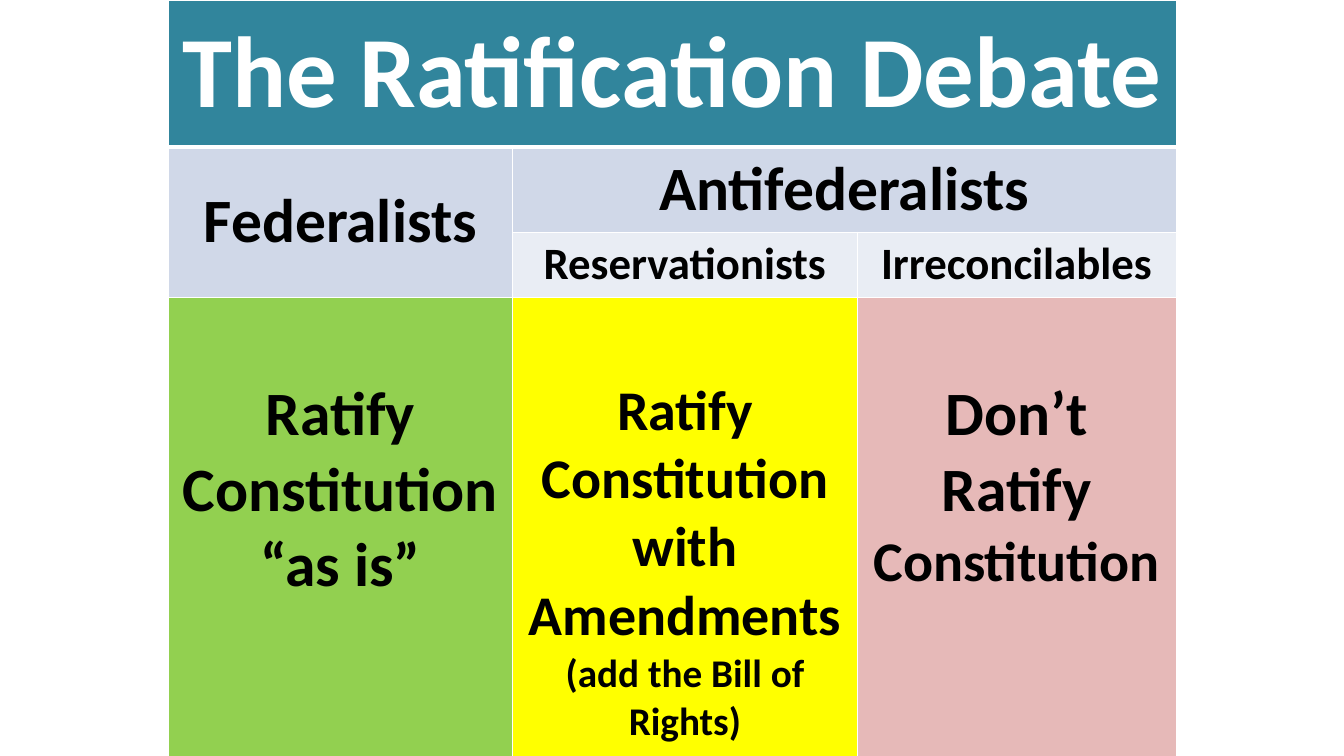
"""Build the Ratification Debate table slide."""
from dataclasses import dataclass

from lxml.etree import SubElement
from pptx import Presentation
from pptx.dml.color import RGBColor
from pptx.enum.text import MSO_ANCHOR, PP_ALIGN
from pptx.oxml.ns import qn
from pptx.util import Cm, Pt


@dataclass(frozen=True)
class Theme:
    font: str = "Calibri"
    white: str = "FFFFFF"
    black: str = "000000"
    teal: str = "31859C"
    group: str = "D0D8E8"
    subgroup: str = "E9EDF4"
    green: str = "92D050"
    yellow: str = "FFFF00"
    pink: str = "E6B9B8"
    title: int = 72
    large: int = 44
    medium: int = 40
    small: int = 32
    note: int = 28
    thin: int = 1
    thick: int = 3


THEME = Theme()
TABLE_LEFT = 4.24
COLUMN_WIDTHS = [8.68, 8.68, 8.04]
ROW_HEIGHTS = [3.7, 2.15, 1.62, 12.6]
POSITION_ROW = 3
POSITION_TOP_MARGIN = 2.02

# (row, column, row span, column span, fill, paragraphs of (text, size) runs)
CELLS = [
    (0, 0, 1, 3, THEME.teal, [[("The Ratification Debate", THEME.title)]]),
    (1, 0, 2, 1, THEME.group, [[("Federalists", THEME.large)]]),
    (1, 1, 1, 2, THEME.group, [[("Antifederalists", THEME.large)]]),
    (2, 1, 1, 1, THEME.subgroup, [[("Reservationists", THEME.small)]]),
    (2, 2, 1, 1, THEME.subgroup, [[("Irreconcilables", THEME.small)]]),
    (3, 0, 1, 1, THEME.green, [[("Ratify Constitution “as is”", THEME.large)]]),
    (3, 1, 1, 1, THEME.yellow, [
        [("Ratify Constitution with Amendments", THEME.medium)],
        [("(add the Bill of Rights)", THEME.note)],
    ]),
    (3, 2, 1, 1, THEME.pink, [
        [("Don’t Ratify ", THEME.large), ("Constitution", THEME.medium)],
    ]),
]


def set_borders(cell, row):
    properties = cell._tc.get_or_add_tcPr()
    widths = {
        "a:lnL": THEME.thin,
        "a:lnR": THEME.thin,
        "a:lnT": THEME.thick if row == 1 else THEME.thin,
        "a:lnB": THEME.thick if row == 0 else THEME.thin,
    }
    for position, (tag, width) in enumerate(widths.items()):
        line = SubElement(properties, qn(tag), w=str(Pt(width)))
        fill = SubElement(line, qn("a:solidFill"))
        SubElement(fill, qn("a:srgbClr"), val=THEME.white)
        properties.insert(position, line)


def write_text(cell, paragraphs, color):
    text_frame = cell.text_frame
    for index, runs in enumerate(paragraphs):
        paragraph = text_frame.add_paragraph() if index else text_frame.paragraphs[0]
        paragraph.alignment = PP_ALIGN.CENTER
        for text, size in runs:
            run = paragraph.add_run()
            run.text = text
            run.font.name = THEME.font
            run.font.size = Pt(size)
            run.font.bold = True
            run.font.color.rgb = RGBColor.from_string(color)


def add_debate_table(slide):
    shape = slide.shapes.add_table(
        len(ROW_HEIGHTS), len(COLUMN_WIDTHS), Cm(TABLE_LEFT), Cm(0),
        Cm(sum(COLUMN_WIDTHS)), Cm(sum(ROW_HEIGHTS)),
    )
    table = shape.table
    table.horz_banding = False
    for column, width in zip(table.columns, COLUMN_WIDTHS):
        column.width = Cm(width)
    for row, height in zip(table.rows, ROW_HEIGHTS):
        row.height = Cm(height)

    for top, left, row_span, column_span, fill, paragraphs in CELLS:
        for row in range(top, top + row_span):
            for column in range(left, left + column_span):
                cell = table.cell(row, column)
                cell.fill.solid()
                cell.fill.fore_color.rgb = RGBColor.from_string(fill)
                set_borders(cell, row)
        cell = table.cell(top, left)
        if row_span * column_span > 1:
            cell.merge(table.cell(top + row_span - 1, left + column_span - 1))
        if top == POSITION_ROW:
            cell.vertical_anchor = MSO_ANCHOR.TOP
            cell.margin_top = Cm(POSITION_TOP_MARGIN)
        else:
            cell.vertical_anchor = MSO_ANCHOR.MIDDLE
        write_text(cell, paragraphs, THEME.white if top == 0 else THEME.black)


def main():
    presentation = Presentation()
    presentation.slide_width = Cm(33.87)
    presentation.slide_height = Cm(19.05)
    slide = presentation.slides.add_slide(presentation.slide_layouts[6])
    add_debate_table(slide)
    presentation.save("out.pptx")


if __name__ == "__main__":
    main()
